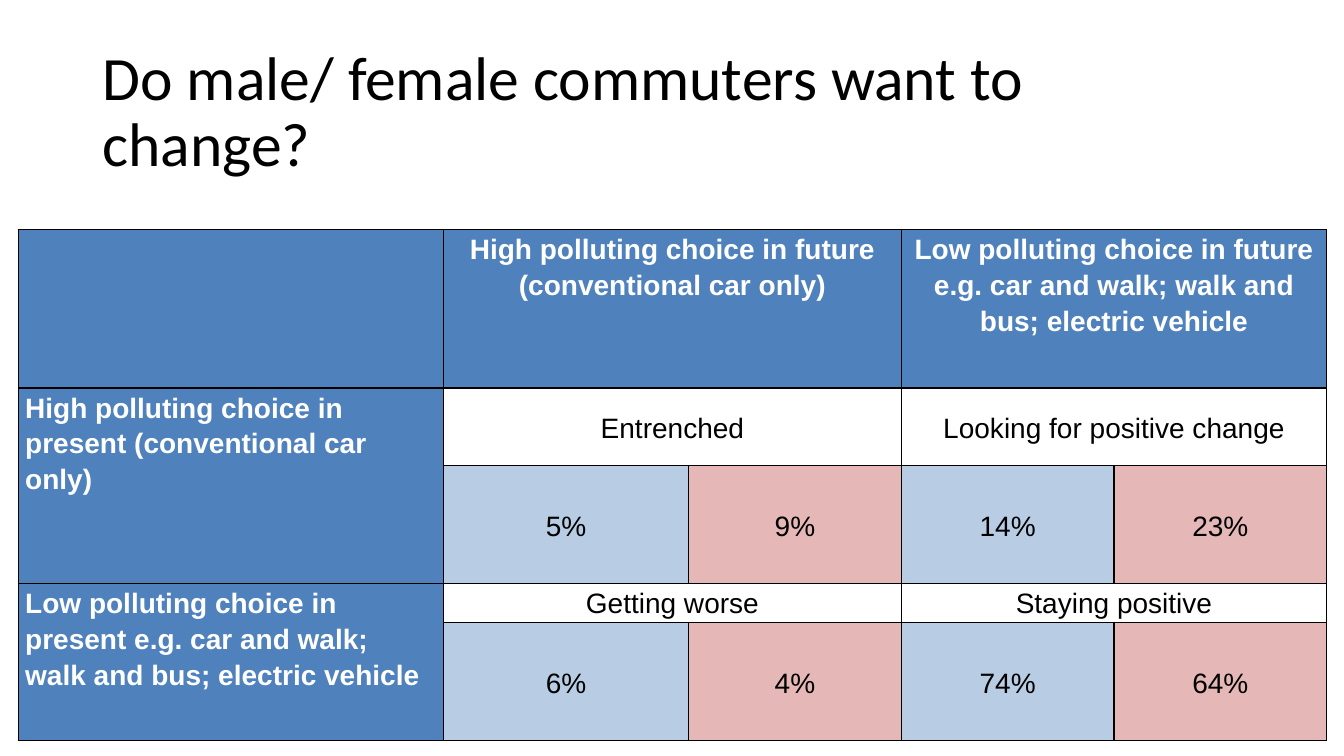
from lxml import etree
from pptx import Presentation
from pptx.dml.color import RGBColor
from pptx.enum.text import MSO_ANCHOR as Anchor, PP_ALIGN as Align
from pptx.oxml.ns import qn
from pptx.util import Inches, Pt

BLACK, WHITE = "000000", "FFFFFF"
BLUE, MALE, FEMALE = "4F81BD", "B8CCE4", "E5B8B7"

COLUMN_WIDTHS = [4.22, 2.43, 2.11, 2.11, 2.11]
ROW_HEIGHTS = [1.57, 0.77, 1.17, 0.37, 1.17]

FUTURE_CHOICES = [
    "High polluting choice in future (conventional car only)",
    "Low polluting choice in future e.g. car and walk; walk and bus; electric vehicle",
]
# Present choice, outcome names, name anchor, male and female shares per outcome
PRESENT_CHOICES = [
    ("High polluting choice in present (conventional car only)",
     ["Entrenched", "Looking for positive change"], Anchor.MIDDLE,
     ["5%", "9%", "14%", "23%"]),
    ("Low polluting choice in present e.g. car and walk; walk and bus; electric vehicle",
     ["Getting worse", "Staying positive"], Anchor.TOP,
     ["6%", "4%", "74%", "64%"]),
]


def color(value):
    return RGBColor.from_string(value)


def set_values(target, values):
    for name, value in values.items():
        setattr(target, name, value)


def write_text(frame, text, font, paragraph_format):
    paragraph = frame.paragraphs[0]
    set_values(paragraph, paragraph_format)
    run = paragraph.add_run()
    run.text = text
    font = dict(font)
    run.font.color.rgb = color(font.pop("color"))
    set_values(run.font, font)


def add_title(slide, text):
    box = slide.shapes.add_textbox(Inches(0.92), Inches(0.4), Inches(11.5), Inches(1.45))
    set_values(box.text_frame, {"word_wrap": True, "vertical_anchor": Anchor.MIDDLE})
    write_text(box.text_frame, text,
               {"name": "Calibri", "size": Pt(44), "color": BLACK},
               {"line_spacing": 0.9})


def add_borders(cell):
    properties = cell._tc.get_or_add_tcPr()
    for index, side in enumerate(("lnL", "lnR", "lnT", "lnB")):
        line = etree.Element(qn(f"a:{side}"), w=str(Pt(1)))
        fill = etree.SubElement(line, qn("a:solidFill"))
        etree.SubElement(fill, qn("a:srgbClr"), val=BLACK)
        properties.insert(index, line)


def fill_cell(cell, text, fill, align=Align.CENTER, anchor=Anchor.MIDDLE, gap=6):
    heading = fill == BLUE
    set_values(cell, {
        "margin_left": Inches(0.07), "margin_right": Inches(0.07),
        "margin_top": 0, "margin_bottom": 0, "vertical_anchor": anchor,
    })
    cell.fill.solid()
    cell.fill.fore_color.rgb = color(fill)
    if text:
        write_text(cell.text_frame, text,
                   {"name": "Arial", "size": Pt(20), "bold": heading,
                    "color": WHITE if heading else BLACK},
                   {"alignment": align, "line_spacing": 1.15,
                    "space_before": Pt(gap), "space_after": Pt(gap)})


def add_grid(slide):
    frame = slide.shapes.add_table(
        len(ROW_HEIGHTS), len(COLUMN_WIDTHS), Inches(0.18), Inches(2.28),
        Inches(sum(COLUMN_WIDTHS)), Inches(sum(ROW_HEIGHTS)))
    table = frame.table
    set_values(table, {"first_row": False, "horz_banding": False})
    for column, width in zip(table.columns, COLUMN_WIDTHS):
        column.width = Inches(width)
    for row, height in zip(table.rows, ROW_HEIGHTS):
        row.height = Inches(height)
    return table


def add_choice_table(slide):
    table = add_grid(slide)

    # Future choices across the top
    fill_cell(table.cell(0, 0), "", BLUE)
    for index, choice in enumerate(FUTURE_CHOICES):
        column = 1 + 2 * index
        table.cell(0, column).merge(table.cell(0, column + 1))
        fill_cell(table.cell(0, column), choice, BLUE, anchor=Anchor.TOP)

    # Present choices, each with outcome names above male and female shares
    for index, (choice, outcomes, anchor, shares) in enumerate(PRESENT_CHOICES):
        row = 1 + 2 * index
        table.cell(row, 0).merge(table.cell(row + 1, 0))
        fill_cell(table.cell(row, 0), choice, BLUE, Align.LEFT, Anchor.TOP)
        for position, outcome in enumerate(outcomes):
            column = 1 + 2 * position
            table.cell(row, column).merge(table.cell(row, column + 1))
            gap = 6 if outcome == "Entrenched" else 12
            fill_cell(table.cell(row, column), outcome, WHITE, anchor=anchor, gap=gap)
        for position, share in enumerate(shares):
            fill, gap = ((MALE, 12), (FEMALE, 6))[position % 2]
            fill_cell(table.cell(row + 1, position + 1), share, fill, gap=gap)

    for cell in table.iter_cells():
        add_borders(cell)


def main():
    presentation = Presentation()
    presentation.slide_width = Inches(13.33)
    presentation.slide_height = Inches(7.5)
    slide = presentation.slides.add_slide(presentation.slide_layouts[6])
    add_title(slide, "Do male/ female commuters want to change?")
    add_choice_table(slide)
    presentation.save("out.pptx")


if __name__ == "__main__":
    main()
